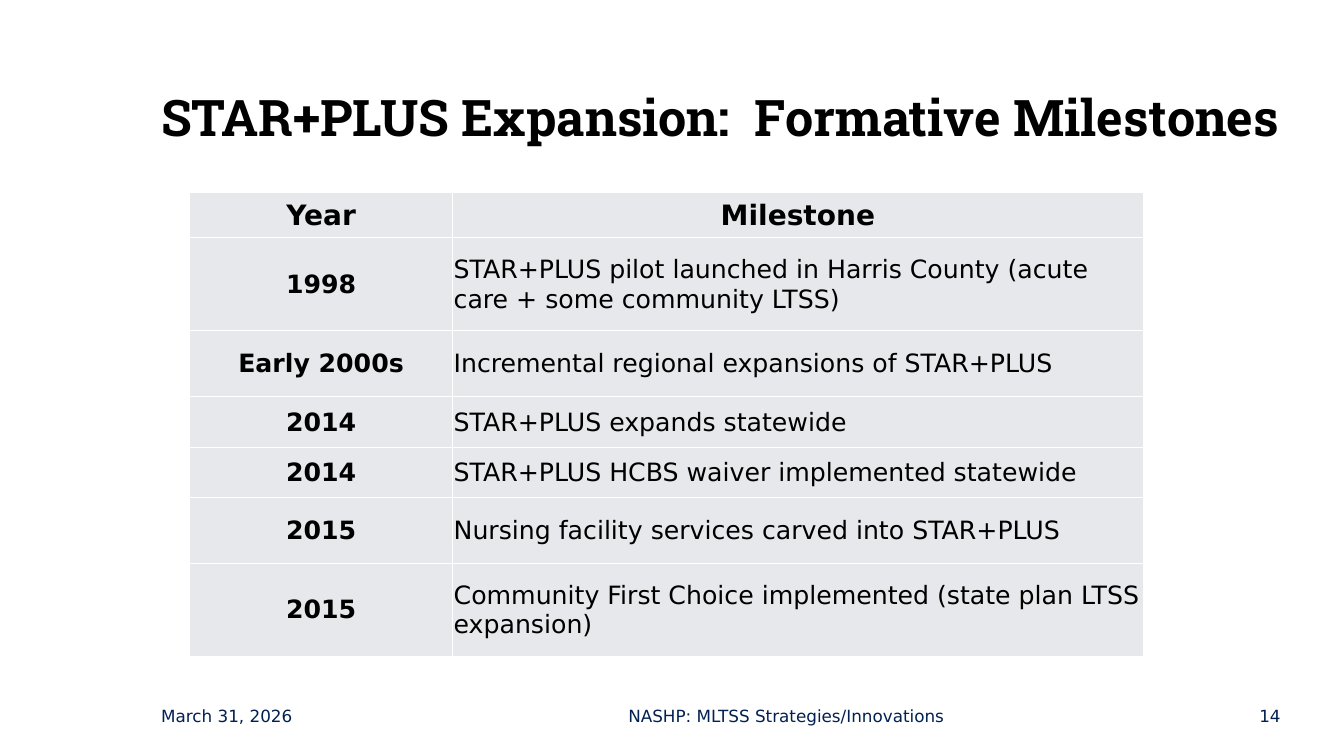
import pptx
import pptx.dml.color
import pptx.enum.text
import pptx.oxml
import pptx.oxml.ns
import pptx.util
from pptx.util import Inches

ALIGN = pptx.enum.text.PP_ALIGN
ANCHOR = pptx.enum.text.MSO_ANCHOR
BODY_FONT = "DejaVu Sans"
TITLE_FONT = "Roboto Slab"
BLACK, NAVY, GREY, WHITE = "000000", "022151", "E7E8EB", "FFFFFF"

COLUMN_WIDTHS = [2.61, 6.85]
ROW_HEIGHTS = [0.45, 0.92, 0.65, 0.51, 0.5, 0.65, 0.92]
MILESTONES = [
    ("Year", "Milestone"),
    ("1998", "STAR+PLUS pilot launched in Harris County (acute care + some community LTSS)"),
    ("Early 2000s", "Incremental regional expansions of STAR+PLUS"),
    ("2014", "STAR+PLUS expands statewide"),
    ("2014", "STAR+PLUS HCBS waiver implemented statewide"),
    ("2015", "Nursing facility services carved into STAR+PLUS"),
    ("2015", "Community First Choice implemented (state plan LTSS expansion)"),
]
FOOTERS = [
    ("March 31, 2026", 1.5, 2.3, ALIGN.LEFT),
    ("NASHP: MLTSS Strategies/Innovations", 4, 7.6, ALIGN.CENTER),
    ("14", 11.8, 1, ALIGN.RIGHT),
]


def color(value):
    """Turn a hex string into a colour."""
    return pptx.dml.color.RGBColor.from_string(value)


def write_text(frame, text, size=18, font=BODY_FONT, fill=BLACK, bold=False, align=ALIGN.LEFT):
    """Write one formatted paragraph into a text frame."""
    para = frame.paragraphs[0]
    para.alignment = align
    span = para.add_run()
    span.text = text
    span.font.size = pptx.util.Pt(size)
    span.font.name = font
    span.font.bold = bold
    span.font.color.rgb = color(fill)


def add_title(slide, text):
    """Place and format the title placeholder."""
    title = slide.shapes.title
    title.left, title.top = Inches(1.5), Inches(0.3)
    title.width, title.height = Inches(11.56), Inches(1.2)
    frame = title.text_frame
    frame.word_wrap = True
    frame.auto_size = pptx.enum.text.MSO_AUTO_SIZE.NONE
    frame.vertical_anchor = ANCHOR.BOTTOM
    write_text(frame, text, size=36, font=TITLE_FONT, bold=True)


def add_footer(slide, text, left, width, align):
    """Add one text box on the footer line."""
    box = slide.shapes.add_textbox(Inches(left), Inches(6.9), Inches(width), Inches(0.4))
    frame = box.text_frame
    frame.word_wrap = True
    frame.vertical_anchor = ANCHOR.MIDDLE
    write_text(frame, text, size=12, fill=NAVY, align=align)


def add_borders(cell, fill, points):
    """Draw a solid line on all four sides of a cell."""
    properties = cell._tc.get_or_add_tcPr()
    for index, side in enumerate(("lnL", "lnR", "lnT", "lnB")):
        line = pptx.oxml.parse_xml(
            f'<a:{side} {pptx.oxml.ns.nsdecls("a")} w="{pptx.util.Pt(points)}">'
            f'<a:solidFill><a:srgbClr val="{fill}"/></a:solidFill></a:{side}>'
        )
        properties.insert(index, line)


def format_cell(cell):
    """Set the fill, margins, anchor and borders of a cell."""
    cell.fill.solid()
    cell.fill.fore_color.rgb = color(GREY)
    cell.margin_left = cell.margin_right = cell.margin_top = Inches(0.01)
    cell.margin_bottom = 0
    cell.vertical_anchor = ANCHOR.MIDDLE
    add_borders(cell, WHITE, 1)


def add_milestone_table(slide):
    """Add the table of years and milestones."""
    table = slide.shapes.add_table(
        len(MILESTONES), len(COLUMN_WIDTHS), Inches(1.88), Inches(1.91),
        Inches(sum(COLUMN_WIDTHS)), Inches(sum(ROW_HEIGHTS)),
    ).table
    table.horz_banding = False
    for column, width in zip(table.columns, COLUMN_WIDTHS):
        column.width = Inches(width)
    for row, height in zip(table.rows, ROW_HEIGHTS):
        row.height = Inches(height)
    for row_index, texts in enumerate(MILESTONES):
        for column_index, text in enumerate(texts):
            cell = table.cell(row_index, column_index)
            format_cell(cell)
            header = row_index == 0
            label = header or column_index == 0
            write_text(cell.text_frame, text, size=20 if header else 18, bold=label,
                       align=ALIGN.CENTER if label else ALIGN.LEFT)


def main():
    """Build the milestones slide and save the deck."""
    deck = pptx.Presentation()
    deck.slide_width, deck.slide_height = Inches(13.33), Inches(7.5)
    slide = deck.slides.add_slide(deck.slide_layouts.get_by_name("Title Only"))
    add_title(slide, "STAR+PLUS Expansion:  Formative Milestones")
    for footer in FOOTERS:
        add_footer(slide, *footer)
    add_milestone_table(slide)
    deck.save("out.pptx")


if __name__ == "__main__":
    main()
